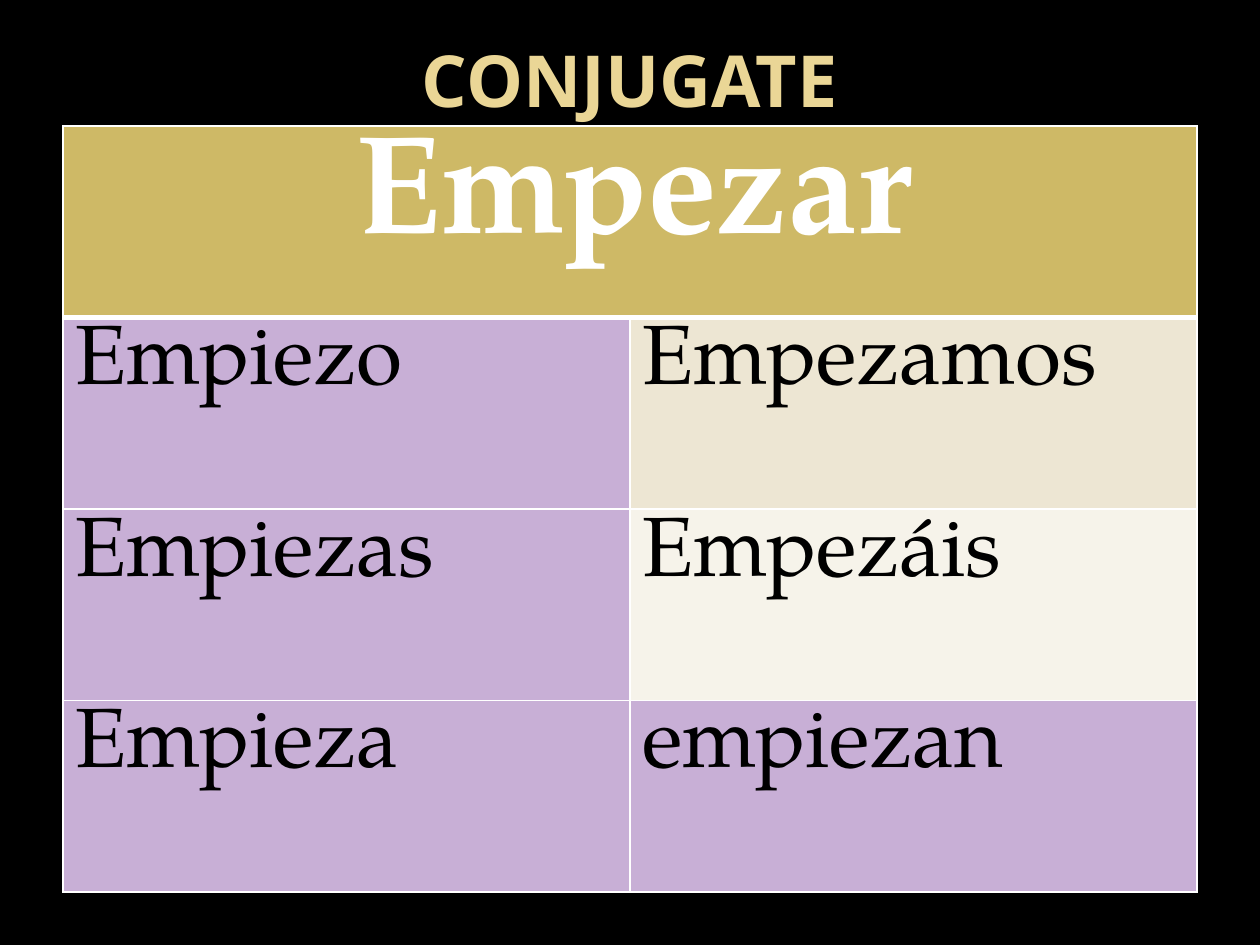
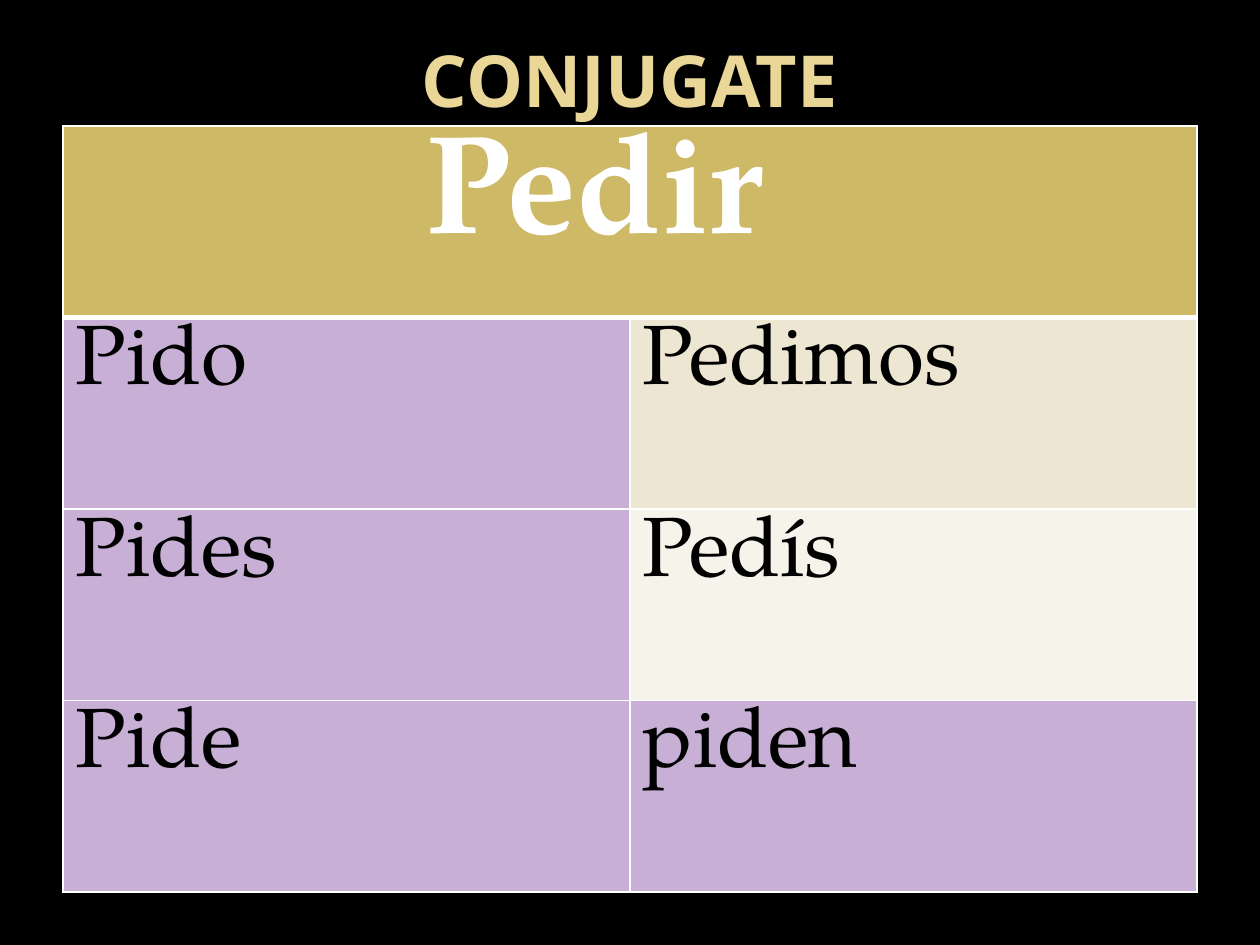
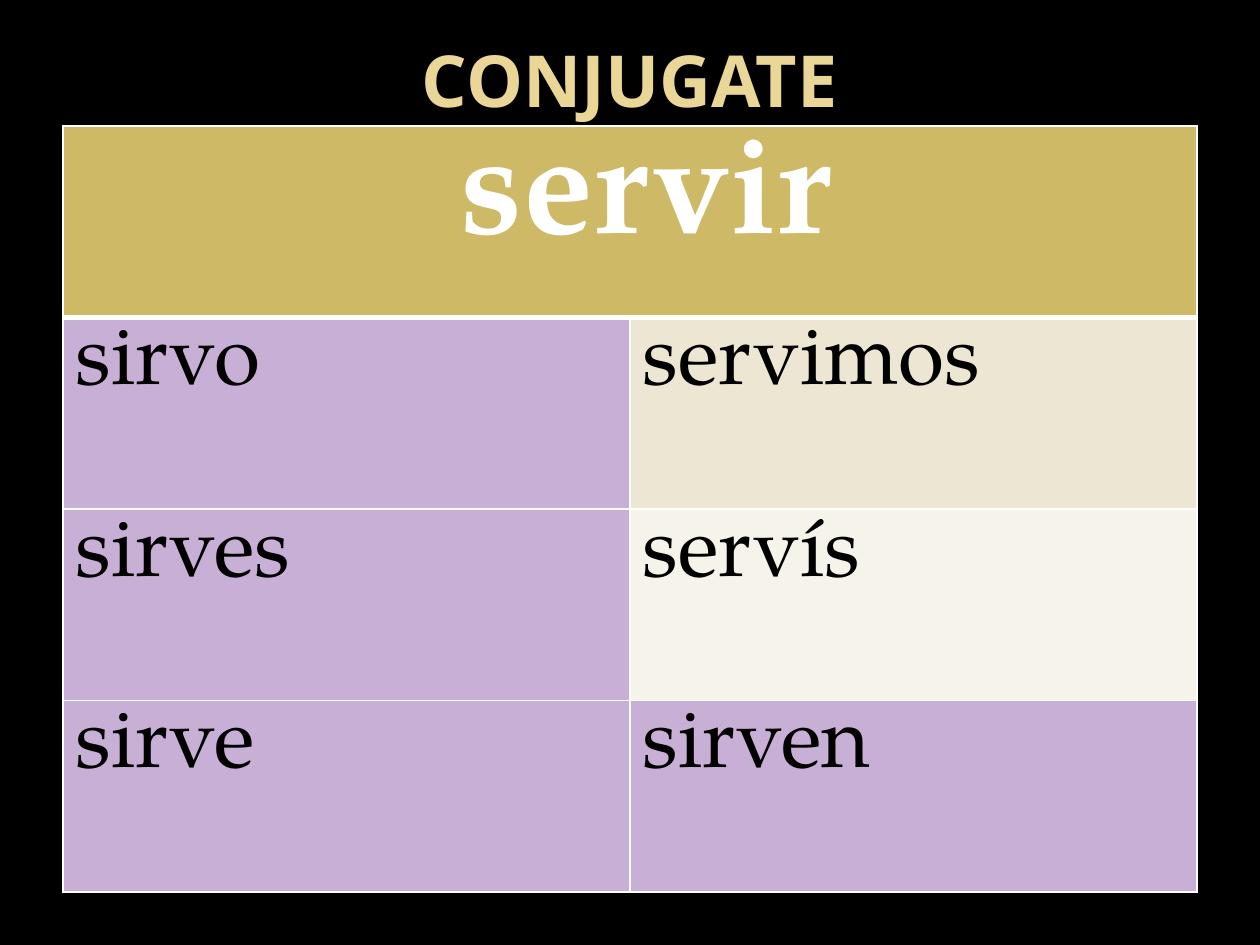
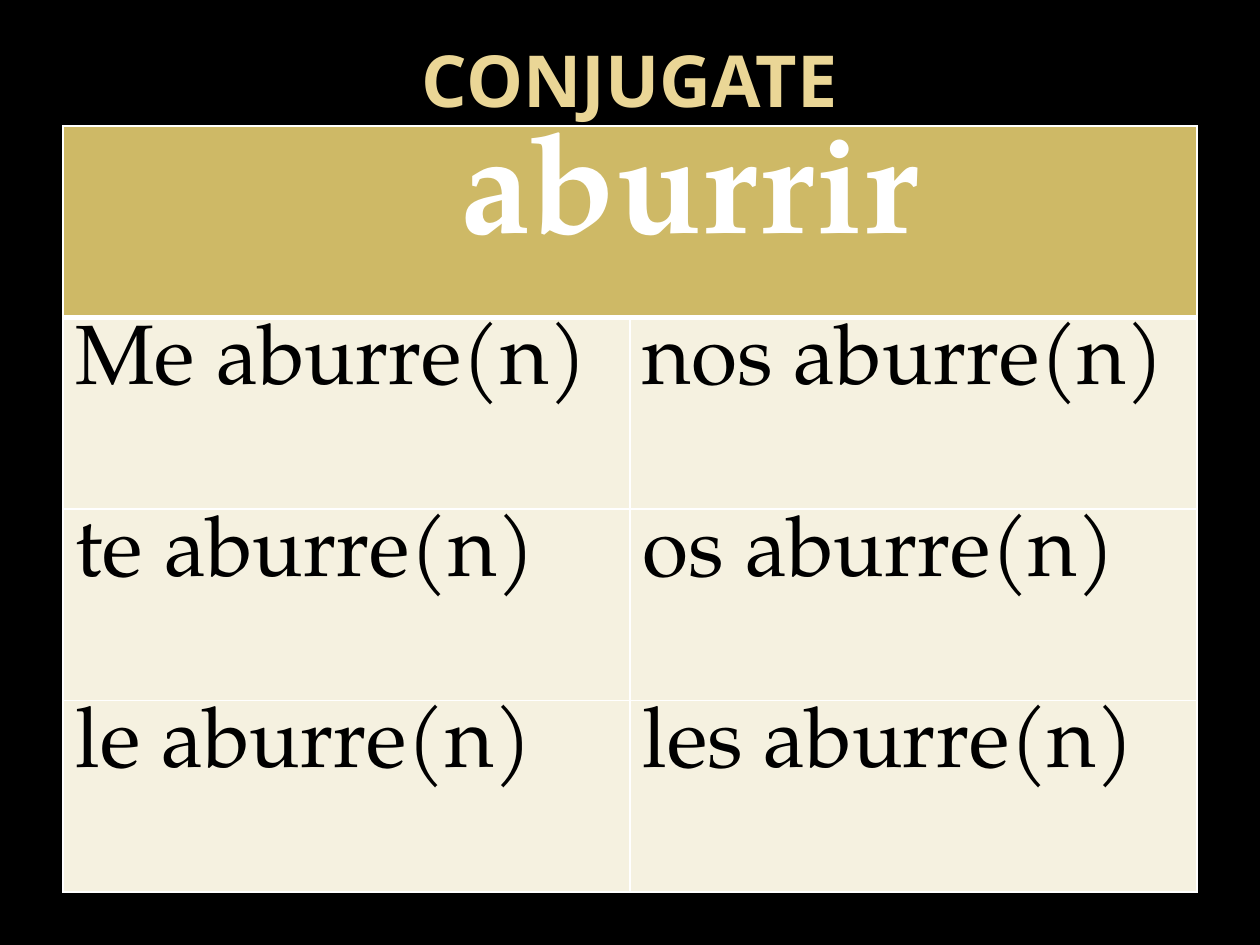
from lxml import etree
from pptx import Presentation
from pptx import util as u
from pptx.dml.color import RGBColor
from pptx.enum import text
from pptx.oxml import ns

PX = 914400 / 126
COLORS = {
    "background": "000000", "title": "EAD696", "white": "FFFFFF",
    "ink": "000000", "header": "CEB966", "changed": "C8AFD6",
    "band_dark": "EDE6D3", "band_light": "F6F3EA", "cream": "F5F1E0",
}
TITLE_FONT, BODY_FONT = "Open Sans", "TeX Gyre Pagella"
TITLE_BOX = (63, 0, 1134, 158)
TABLE_BOX = (63, 126, 1134, 766)

# Fills of the three form rows: stem-changing verbs mark the changed forms
STEM_CHANGE = [("changed", "band_dark"), ("changed", "band_light"),
               ("changed", "changed")]
PLAIN = [("cream", "cream")] * 3

# Infinitive, its left inset in px, forms by row, row fills
VERBS = [
    ("Empezar", 293, [("Empiezo", "Empezamos"), ("Empiezas", "Empezáis"),
                      ("Empieza", "empiezan")], STEM_CHANGE),
    ("Pedir", 363, [("Pido", "Pedimos"), ("Pides", "Pedís"),
                    ("Pide", "piden")], STEM_CHANGE),
    ("servir", 398, [("sirvo", "servimos"), ("sirves", "servís"),
                     ("sirve", "sirven")], STEM_CHANGE),
    ("aburrir", 398, [("Me aburre(n)", "nos aburre(n)"),
                      ("te aburre(n)", "os aburre(n)"),
                      ("le aburre(n)", "les aburre(n)")], PLAIN),
]


def px(n):
    return u.Emu(round(n * PX))


def rgb(name):
    return RGBColor.from_string(COLORS[name])


def add_run(p, words, size, font, color, bold=False):
    r = p.add_run()
    r.text = words
    r.font.size, r.font.name, r.font.bold = u.Pt(size), font, bold
    r.font.color.rgb = rgb(color)


def set_borders(cell, top=1, bottom=1):
    """White lines on all four sides; widths in points."""
    tcPr = cell._tc.get_or_add_tcPr()
    widths = {"a:lnL": 1, "a:lnR": 1, "a:lnT": top, "a:lnB": bottom}
    for i, (tag, width) in enumerate(widths.items()):
        ln = etree.Element(ns.qn(tag), w=str(u.Pt(width)))
        fill = etree.SubElement(ln, ns.qn("a:solidFill"))
        etree.SubElement(fill, ns.qn("a:srgbClr"), val=COLORS["white"])
        tcPr.insert(i, ln)


def style_cell(cell, fill, top=1, bottom=1):
    cell.fill.solid()
    cell.fill.fore_color.rgb = rgb(fill)
    set_borders(cell, top, bottom)


def add_title(s, box, words):
    tf = s.shapes.add_textbox(*map(px, box)).text_frame
    tf.word_wrap = True
    tf.vertical_anchor = text.MSO_ANCHOR.MIDDLE
    p = tf.paragraphs[0]
    p.alignment = text.PP_ALIGN.CENTER
    add_run(p, words, 41, TITLE_FONT, "title", bold=True)


def add_verb_table(s, box, infinitive, inset, forms, fills):
    table = s.shapes.add_table(len(forms) + 1, 2, *map(px, box)).table
    table.horz_banding = False

    # Infinitive across both columns
    header = table.cell(0, 0)
    header.merge(table.cell(0, 1))
    for col in range(2):
        style_cell(table.cell(0, col), "header", bottom=3)
    header.margin_left = px(inset)
    add_run(header.text_frame.paragraphs[0], infinitive, 80, BODY_FONT,
            "white", bold=True)

    # Singular forms on the left, plural forms on the right
    for row, (words, colors) in enumerate(zip(forms, fills), start=1):
        for col, (word, color) in enumerate(zip(words, colors)):
            cell = table.cell(row, col)
            style_cell(cell, color, top=3 if row == 1 else 1)
            add_run(cell.text_frame.paragraphs[0], word, 48, BODY_FONT, "ink")


def add_verb_slide(prs, verb):
    s = prs.slides.add_slide(prs.slide_layouts[6])
    s.background.fill.solid()
    s.background.fill.fore_color.rgb = rgb("background")
    add_title(s, TITLE_BOX, "CONJUGATE")
    add_verb_table(s, TABLE_BOX, *verb)


def main():
    prs = Presentation()
    prs.slide_width, prs.slide_height = px(1260), px(945)
    for verb in VERBS:
        add_verb_slide(prs, verb)
    prs.save("out.pptx")


if __name__ == "__main__":
    main()
